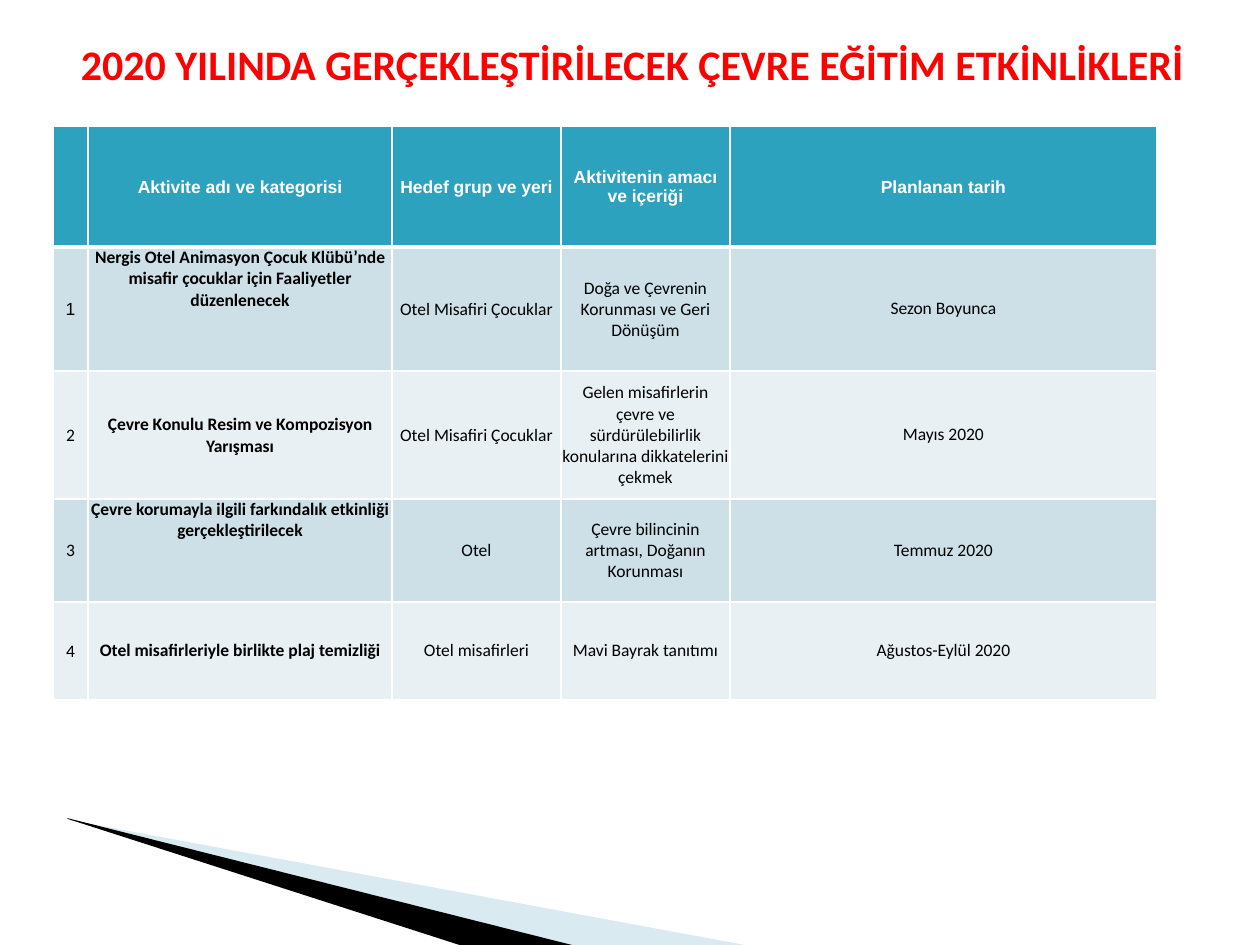
import pptx
import pptx.dml.color
import pptx.enum.text
import pptx.oxml.ns
import pptx.util
from lxml import etree

PX = 914400 // 126
COLORS = {
    "title": "FF0000", "header": "2DA2BF", "band_dark": "CDE0E8",
    "band_light": "E8F0F4", "white": "FFFFFF", "black": "000000",
    "wedge": "A0CBDC",
}
ALIGN = pptx.enum.text.PP_ALIGN
ANCHOR = pptx.enum.text.MSO_ANCHOR
SIDES = ("left", "top", "right", "bottom")
TIGHT, WIDE, FLUSH = (1, 1, 1, 0), (9, 0, 9, 0), (0, 0, 0, 0)

COLUMNS = [35, 304, 169, 169, 427]
HEIGHTS = [121, 124, 128, 103, 98]
ROWS = [
    ["", "Aktivite adı ve kategorisi", "Hedef grup ve yeri",
     "Aktivitenin amacı ve içeriği", "Planlanan tarih"],
    ["1", "Nergis Otel Animasyon Çocuk Klübü’nde misafir çocuklar için "
     "Faaliyetler düzenlenecek", "Otel Misafiri Çocuklar",
     "Doğa ve Çevrenin Korunması ve Geri Dönüşüm", "Sezon Boyunca"],
    ["2", "Çevre Konulu Resim ve Kompozisyon Yarışması", "Otel Misafiri Çocuklar",
     "Gelen misafirlerin çevre ve sürdürülebilirlik konularına dikkatelerini çekmek",
     "Mayıs 2020"],
    ["3", "Çevre korumayla ilgili farkındalık etkinliği gerçekleştirilecek", "Otel",
     "Çevre bilincinin artması, Doğanın Korunması", "Temmuz 2020"],
    ["4", "Otel misafirleriyle birlikte plaj temizliği", "Otel misafirleri",
     "Mavi Bayrak tanıtımı", "Ağustos-Eylül 2020"],
]
TIGHT_COLUMNS = [5, 4, 4, 1, 1]  # leading columns with narrow margins, per row
FLUSH_CELLS = {(1, 1), (3, 1)}   # top-aligned, no margins


def px(n):
    return pptx.util.Emu(n * PX)


def rgb(name):
    return pptx.dml.color.RGBColor.from_string(COLORS[name])


class SlideBuilder:
    def __init__(self, prs):
        self.s = prs.slides.add_slide(prs.slide_layouts[5])

    def text(self, tf, content, color, **font):
        p = tf.paragraphs[0]
        p.alignment = ALIGN.CENTER
        if not content:
            return
        r = p.add_run()
        r.text = content
        for name, value in font.items():
            setattr(r.font, name, value)
        r.font.color.rgb = rgb(color)

    def title(self, content, left, top, width, height):
        sp = self.s.shapes.title
        sp.left, sp.top, sp.width, sp.height = map(px, (left, top, width, height))
        sp.text_frame.word_wrap = False
        self.text(sp.text_frame, content, "title", name="Calibri",
                  size=pptx.util.Pt(24), bold=True)

    def polygon(self, points, color, alpha=None):
        fb = self.s.shapes.build_freeform(*points[0], scale=PX)
        fb.add_line_segments(points[1:], close=True)
        sp = fb.convert_to_shape()
        sp.shadow.inherit = False
        sp.line.fill.background()
        sp.fill.solid()
        sp.fill.fore_color.rgb = rgb(color)
        if alpha:
            clr = sp._element.spPr.find(".//" + pptx.oxml.ns.qn("a:srgbClr"))
            etree.SubElement(clr, pptx.oxml.ns.qn("a:alpha"), val=str(alpha * 1000))

    def borders(self, cell, top, bottom):
        tc_pr = cell._tc.get_or_add_tcPr()
        for side, width in (("L", 1), ("R", 1), ("T", top), ("B", bottom)):
            ln = etree.SubElement(tc_pr, pptx.oxml.ns.qn("a:ln" + side),
                                  w=str(int(pptx.util.Pt(width))))
            fill = etree.SubElement(ln, pptx.oxml.ns.qn("a:solidFill"))
            etree.SubElement(fill, pptx.oxml.ns.qn("a:srgbClr"), val=COLORS["white"])

    def cell(self, cell, row, col, content):
        header = row == 0
        flush = (row, col) in FLUSH_CELLS
        margins = FLUSH if flush else TIGHT if col < TIGHT_COLUMNS[row] else WIDE
        for side, margin in zip(SIDES, margins):
            setattr(cell, "margin_" + side, px(margin))
        cell.vertical_anchor = ANCHOR.TOP if flush else ANCHOR.MIDDLE
        self.borders(cell, top=3 if row == 1 else 1, bottom=3 if header else 1)
        cell.fill.solid()
        cell.fill.fore_color.rgb = rgb(
            "header" if header else "band_dark" if row % 2 else "band_light")
        arial = header or (row, col) == (1, 0)
        self.text(cell.text_frame, content, "white" if header else "black",
                  name="Arial" if arial else "Calibri",
                  size=pptx.util.Pt(10), bold=header or col == 1)

    def table(self, left, top, columns, heights, rows):
        frame = self.s.shapes.add_table(
            len(rows), len(columns), px(left), px(top),
            px(sum(columns)), px(sum(heights)))
        table = frame.table
        for column, width in zip(table.columns, columns):
            column.width = px(width)
        for i, (height, contents) in enumerate(zip(heights, rows)):
            table.rows[i].height = px(height)
            for j, content in enumerate(contents):
                self.cell(table.cell(i, j), i, j, content)


def main():
    prs = pptx.Presentation()
    prs.slide_width, prs.slide_height = px(1260), px(945)
    b = SlideBuilder(prs)

    # Corner wedges
    b.polygon([(69, 820), (750, 946), (575, 946), (69, 819)], "wedge", alpha=40)
    b.polygon([(67, 818), (576, 946), (469, 948), (68, 819)], "black")

    # Title
    b.title("2020 YILINDA GERÇEKLEŞTİRİLECEK ÇEVRE EĞİTİM ETKİNLİKLERİ",
            63, 32, 1139, 63)

    # Activity plan
    b.table(53, 126, COLUMNS, HEIGHTS, ROWS)

    prs.save("out.pptx")


if __name__ == "__main__":
    main()
